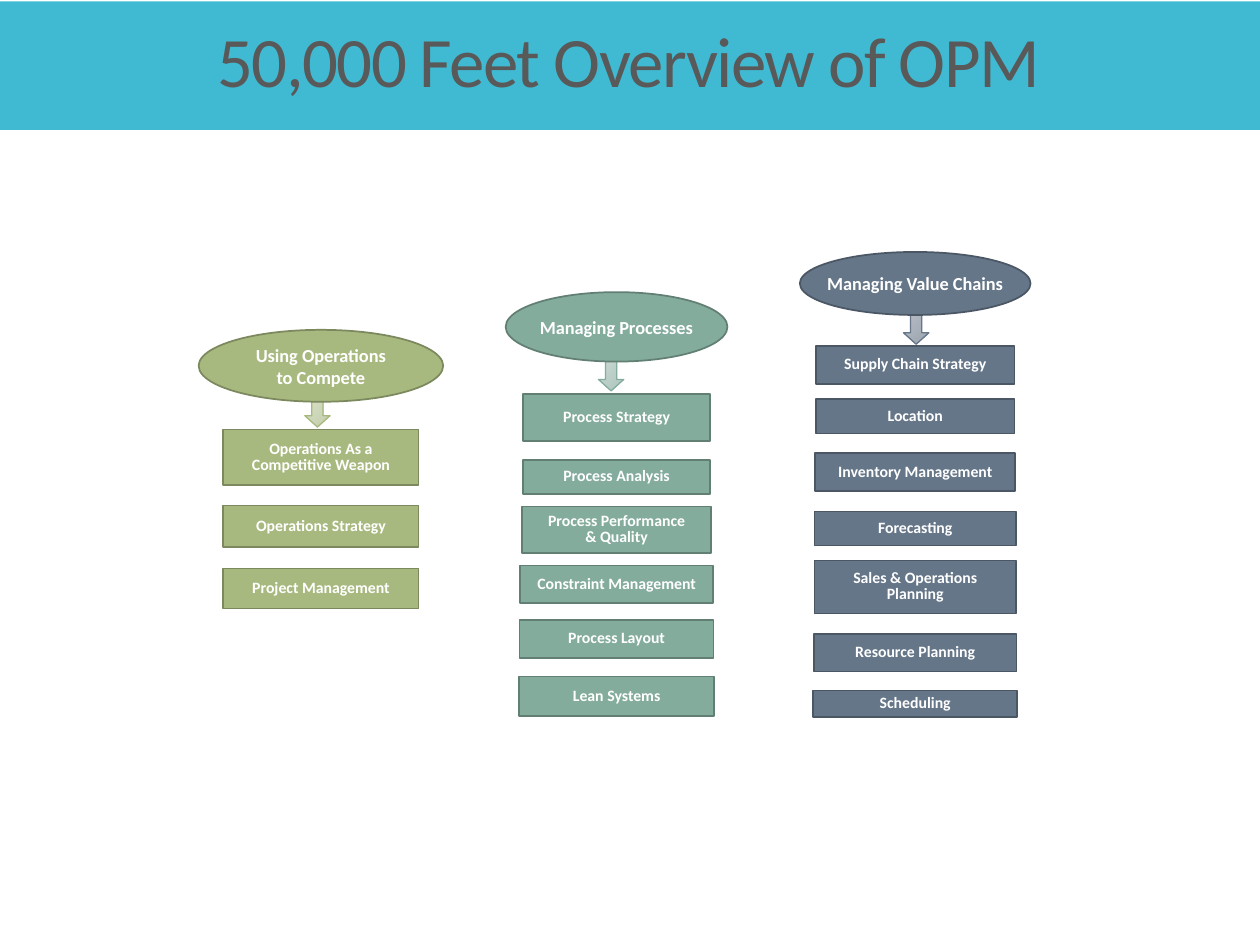
import pptx
import pptx.dml.color
import pptx.enum.shapes
import pptx.enum.text
import pptx.util

Cm, Pt = pptx.util.Cm, pptx.util.Pt
SHAPE = pptx.enum.shapes.MSO_SHAPE

COLORS = {"band": "40BAD2", "title": "595959", "text": "FFFFFF"}
FONT = "Calibri"
ARROW_WIDTH = 0.51

# Lengths in cm. Heading: top, width, height. Arrow: centre, top, height.
# Boxes: text, top, width, height, all centred on the column.
# In texts, \n starts a paragraph and \v breaks a line.
COLUMNS = [
    {
        "center": 12.43, "fill": "84AC9D", "line": "627F74",
        "gradient": ("CBDAD4", "AEC6BD"),
        "heading": ("Managing Processes", 5.89, 4.47, 1.4),
        "arrow": (12.32, 7.19, 0.69),
        "boxes": [
            ("Process Strategy", 7.95, 3.78, 0.94),
            ("Process Analysis", 9.27, 3.78, 0.69),
            ("Process Performance\v& Quality", 10.21, 3.81, 0.94),
            ("Constraint Management", 11.4, 3.89, 0.76),
            ("Process Layout", 12.5, 3.91, 0.76),
            ("Lean Systems", 13.64, 3.94, 0.79),
        ],
    },
    {
        "center": 6.47, "fill": "A8B97F", "line": "7C895E",
        "gradient": ("D9E0CB", "C4CFAB"),
        "heading": ("Using Operations\vto Compete", 6.65, 4.93, 1.45),
        "arrow": (6.4, 7.95, 0.66),
        "boxes": [
            ("Operations As a\nCompetitive Weapon", 8.66, 3.94, 1.12),
            ("Operations Strategy", 10.19, 3.94, 0.84),
            ("Project Management", 11.46, 3.94, 0.81),
        ],
    },
    {
        "center": 18.45, "fill": "657689", "line": "4B5765",
        "gradient": ("BBC0C7", "9AA3AE"),
        "heading": ("Managing Value Chains", 5.08, 4.65, 1.27),
        "arrow": (18.47, 6.25, 0.69),
        "boxes": [
            ("Supply Chain Strategy", 6.98, 4.01, 0.76),
            ("Location", 8.05, 4.01, 0.69),
            ("Inventory Management", 9.14, 4.04, 0.76),
            ("Forecasting", 10.31, 4.06, 0.69),
            ("Sales & Operations\vPlanning", 11.3, 4.06, 1.07),
            ("Resource Planning", 12.78, 4.09, 0.76),
            ("Scheduling", 13.92, 4.11, 0.53),
        ],
    },
]


def rgb(value):
    return pptx.dml.color.RGBColor.from_string(value)


def write_text(tf, text, size, color, bold, spacing):
    tf.vertical_anchor = pptx.enum.text.MSO_ANCHOR.MIDDLE
    for i, paragraph in enumerate(text.split("\n")):
        p = tf.add_paragraph() if i else tf.paragraphs[0]
        p.alignment = pptx.enum.text.PP_ALIGN.CENTER
        p.line_spacing = spacing
        for j, line in enumerate(paragraph.split("\v")):
            if j:
                p.add_line_break()
            r = p.add_run()
            r.text = line
            r.font.name = FONT
            r.font.size = Pt(size)
            r.font.bold = bold
            r.font.color.rgb = rgb(color)


def add_centered(s, kind, center, top, width, height, line, line_width):
    sp = s.shapes.add_shape(kind, Cm(center - width / 2), Cm(top), Cm(width), Cm(height))
    sp.shadow.inherit = False
    sp.line.color.rgb = rgb(line)
    sp.line.width = Pt(line_width)
    return sp


def add_label(s, kind, column, label, size, spacing):
    text, top, width, height = label
    sp = add_centered(s, kind, column["center"], top, width, height, column["line"], 1)
    sp.fill.solid()
    sp.fill.fore_color.rgb = rgb(column["fill"])
    sp.text_frame.word_wrap = False
    write_text(sp.text_frame, text, size, COLORS["text"], True, spacing)


def add_arrow(s, column):
    center, top, height = column["arrow"]
    sp = add_centered(s, SHAPE.DOWN_ARROW, center, top, ARROW_WIDTH, height,
                      column["fill"], 0.75)
    sp.adjustments[0] = 0.45
    sp.adjustments[1] = 0.45
    sp.fill.gradient()
    sp.fill.gradient_angle = 315
    for stop, color in zip(sp.fill.gradient_stops, column["gradient"]):
        stop.color.rgb = rgb(color)


def add_title(s, text):
    sp = s.shapes.title
    sp.left, sp.top, sp.width, sp.height = Cm(-0.05), Cm(0.03), Cm(25.45), Cm(2.59)
    sp.fill.solid()
    sp.fill.fore_color.rgb = rgb(COLORS["band"])
    sp.text_frame.auto_size = pptx.enum.text.MSO_AUTO_SIZE.NONE
    write_text(sp.text_frame, text, 40.5, COLORS["title"], False, 0.85)
    sp.text_frame.paragraphs[0].runs[0].font._element.set("spc", "-90")


def main():
    prs = pptx.Presentation()
    prs.slide_width, prs.slide_height = Cm(25.4), Cm(19.05)
    s = prs.slides.add_slide(prs.slide_layouts[5])
    add_title(s, "50,000 Feet Overview of OPM")
    for column in COLUMNS:
        add_arrow(s, column)
        add_label(s, SHAPE.OVAL, column, column["heading"], 10.5, 1.0)
        for box in column["boxes"]:
            add_label(s, SHAPE.RECTANGLE, column, box, 9, 0.85)
    prs.save("out.pptx")


if __name__ == "__main__":
    main()
